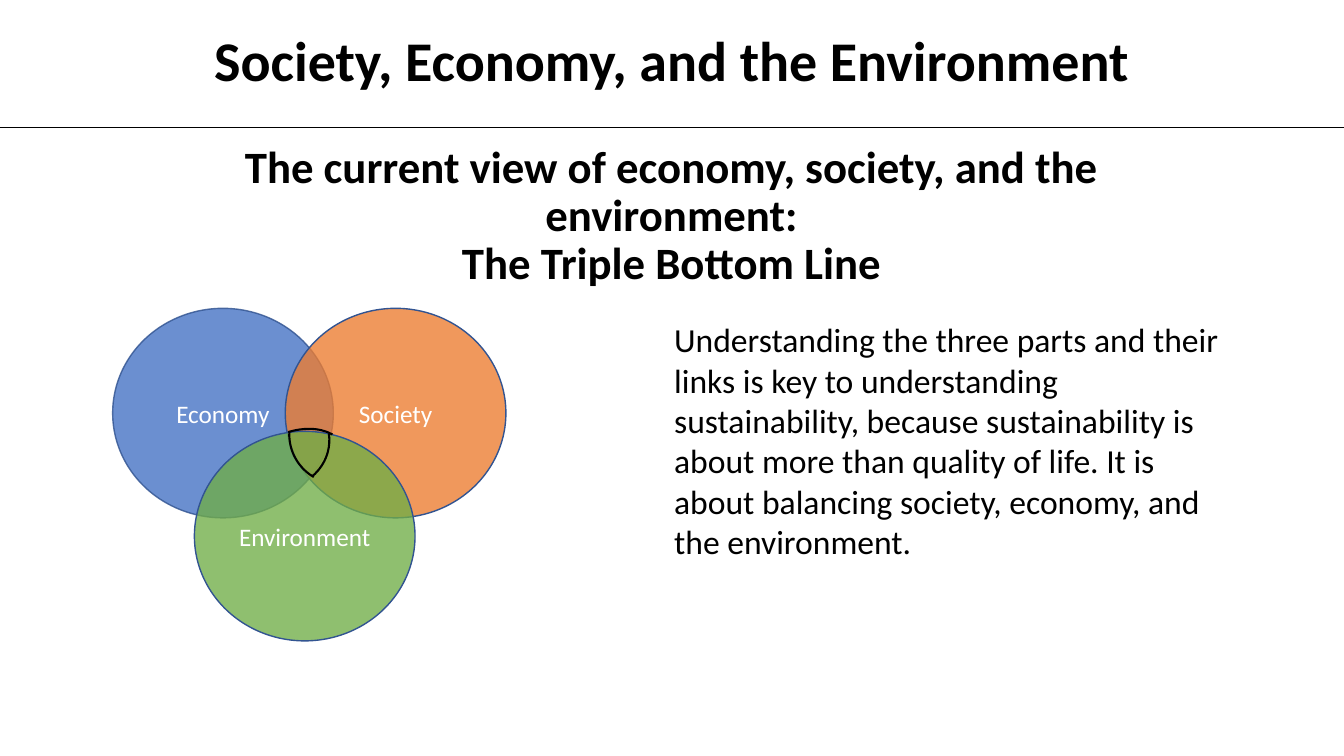
import pptx
import pptx.util
import pptx.dml.color
import pptx.enum.shapes
import pptx.enum.text
import pptx.oxml.ns
import lxml.etree

Cm = pptx.util.Cm
Pt = pptx.util.Pt
RGB = pptx.dml.color.RGBColor.from_string
Kind = pptx.enum.shapes.MSO_SHAPE
Align = pptx.enum.text.PP_ALIGN
Anchor = pptx.enum.text.MSO_ANCHOR
qn = pptx.oxml.ns.qn

theme = {
    "font": "Calibri",
    "ink": "000000",
    "light": "FFFFFF",
    "edge": "325491",
    "blue": "4472C4",
    "orange": "ED7D31",
    "green": "70AD47",
    "head": 40,
    "title": 32,
    "body": 24,
    "label": 18,
}


def write(shape, text, size, color, bold=False, align=Align.CENTER):
    frame = shape.text_frame
    frame.word_wrap = True
    frame.text = text
    para = frame.paragraphs[0]
    para.alignment = align
    for run in para.runs:
        run.font.name = theme["font"]
        run.font.size = Pt(theme[size])
        run.font.bold = bold
        run.font.color.rgb = RGB(theme[color])
    return frame


def fade(fill, percent):
    color = fill._xPr.find(qn("a:solidFill"))[0]
    lxml.etree.SubElement(color, qn("a:alpha")).set("val", str(percent * 1000))


deck = pptx.Presentation()
deck.slide_width = Cm(33.87)
deck.slide_height = Cm(19.05)
slide = deck.slides.add_slide(deck.slide_layouts[6])
shapes = slide.shapes

title = shapes.add_textbox(Cm(2.84), Cm(4.11), Cm(28.17), Cm(2.72))
words = "The current view of economy, society, and the environment:\vThe Triple Bottom Line"
frame = write(title, words, "title", "ink", True)
frame.vertical_anchor = Anchor.MIDDLE
frame.paragraphs[0].line_spacing = 0.9

circles = [
    ("Economy", 2.84, 7.77, "blue", 79, 81),
    ("Society", 7.19, 7.77, "orange", 79, 100),
    ("Environment", 4.9, 10.87, "green", 78, 100),
]
for name, left, top, color, solid, edge in circles:
    circle = shapes.add_shape(Kind.OVAL, Cm(left), Cm(top), Cm(5.56), Cm(5.28))
    circle.shadow.inherit = False
    circle.fill.solid()
    circle.fill.fore_color.rgb = RGB(theme[color])
    fade(circle.fill, solid)
    circle.line.color.rgb = RGB(theme["edge"])
    circle.line.width = Pt(1)
    fade(circle.line.fill, edge)
    write(circle, name, "label", "light").vertical_anchor = Anchor.MIDDLE

body = shapes.add_textbox(Cm(16.74), Cm(7.92), Cm(14.27), Cm(6.4))
words = (
    "Understanding the three parts and their links is key to understanding "
    "sustainability, because sustainability is about more than quality of life. "
    "It is about balancing society, economy, and the environment."
)
write(body, words, "body", "ink", align=Align.LEFT)

arcs = [
    (7.29, 9.68, 2.49, 2.51, 202.5, 203.8),
    (6.17, 10.87, 2.59, 1.75, 339.3, 203.8),
    (5.87, 9.88, 2.36, 2.51, 73.4, 199.62),
]
for left, top, width, height, turn, end in arcs:
    arc = shapes.add_shape(Kind.ARC, Cm(left), Cm(top), Cm(width), Cm(height))
    arc.shadow.inherit = False
    arc.rotation = turn
    arc.adjustments[0] = 166.56
    arc.adjustments[1] = end
    arc.fill.background()
    arc.line.color.rgb = RGB(theme["ink"])
    arc.line.width = Pt(1.5)

head = shapes.add_textbox(Cm(5), Cm(0.51), Cm(23.85), Cm(1.96))
frame = write(head, "Society, Economy, and the Environment", "head", "ink", True)
frame.word_wrap = False
frame.paragraphs[0].space_before = Pt(1)

rule = shapes.add_connector(
    pptx.enum.shapes.MSO_CONNECTOR.STRAIGHT, 0, Cm(3.2), deck.slide_width, Cm(3.2)
)
rule.line.color.rgb = RGB(theme["ink"])
rule.line.width = Pt(0.5)
lxml.etree.SubElement(rule._element.spPr, qn("a:effectLst"))

deck.save("out.pptx")
